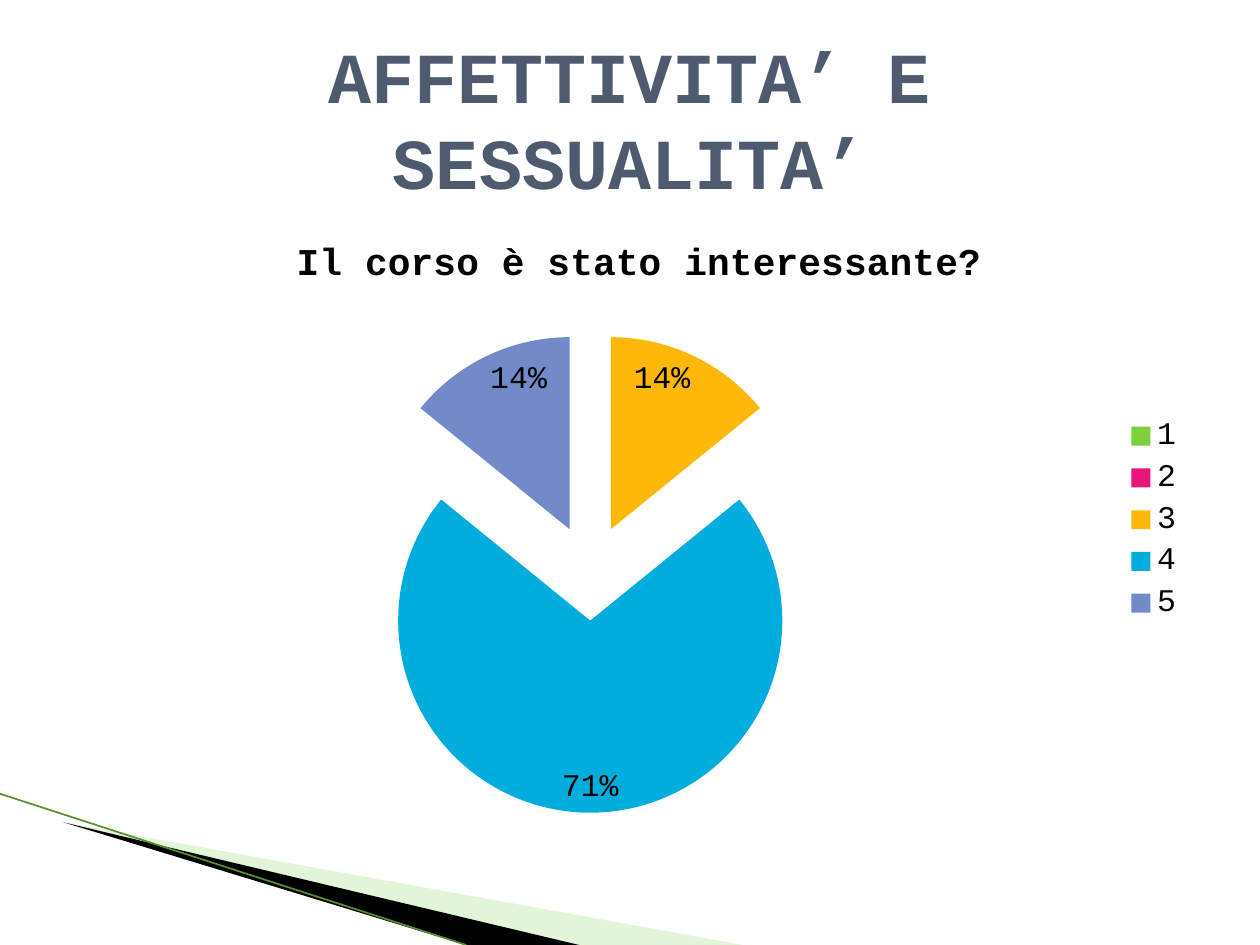
from lxml import etree
from pptx import Presentation, util as u
from pptx.chart import data
from pptx.dml import color
from pptx.enum import chart as ch, shapes, text
from pptx.oxml import ns

FONT = "Courier New"
BLACK = color.RGBColor(0x00, 0x00, 0x00)
SLATE = color.RGBColor(0x4E, 0x5B, 0x6F)
PALE_GREEN = color.RGBColor(0xB8, 0xE7, 0xA1)
EDGE_GREEN = color.RGBColor(0x55, 0x91, 0x2B)
SLICE_COLORS = [
    color.RGBColor(0x7F, 0xD1, 0x3B),
    color.RGBColor(0xEA, 0x15, 0x7A),
    color.RGBColor(0xFE, 0xB8, 0x0A),
    color.RGBColor(0x00, 0xAD, 0xDC),
    color.RGBColor(0x73, 0x8A, 0xC8),
]


class SlideBuilder:
    """Holds the style and current slide; lengths are shares of the slide's size."""

    def __init__(self, deck):
        self.width, self.height = deck.slide_width, deck.slide_height
        self.slide = deck.slides.add_slide(deck.slide_layouts[5])

    def place(self, x, y):
        return round(x * self.width), round(y * self.height)

    def style(self, font, size, rgb, bold=False):
        font.name, font.size, font.bold = FONT, u.Pt(size), bold
        font.color.rgb = rgb

    def add_heading(self, frame, words, size, rgb):
        para = frame.paragraphs[0]
        para.alignment = text.PP_ALIGN.CENTER
        span = para.add_run()
        span.text = words
        self.style(span.font, size, rgb, bold=True)

    def title(self, words, x, y, width, height):
        box = self.slide.shapes.title
        box.left, box.top = self.place(x, y)
        box.width, box.height = self.place(width, height)
        frame = box.text_frame
        frame.word_wrap = True
        frame.auto_size = text.MSO_AUTO_SIZE.NONE
        frame.vertical_anchor = text.MSO_ANCHOR.MIDDLE
        self.add_heading(frame, words, 41, SLATE)

    def wedge(self, corners, rgb, opacity=100):
        start, *others = [self.place(*corner) for corner in corners]
        outline = self.slide.shapes.build_freeform(*start)
        outline.add_line_segments(others, close=True)
        shape = outline.convert_to_shape()
        shape.shadow.inherit = False
        shape.fill.solid()
        shape.fill.fore_color.rgb = rgb
        shape.line.fill.background()
        if opacity < 100:
            tint = shape._element.spPr.find(".//" + ns.qn("a:srgbClr"))
            etree.SubElement(tint, ns.qn("a:alpha"), val=str(opacity * 1000))

    def line(self, start, end, rgb, weight):
        edge = self.slide.shapes.add_connector(
            shapes.MSO_CONNECTOR.STRAIGHT, *self.place(*start), *self.place(*end))
        edge.line.color.rgb = rgb
        edge.line.width = u.Pt(weight)
        etree.SubElement(edge._element.spPr, ns.qn("a:effectLst"))

    def chart_layout(self, parent, index, **settings):
        for old in parent.findall(ns.qn("c:layout")):
            parent.remove(old)
        layout = etree.Element(ns.qn("c:layout"))
        manual = etree.SubElement(layout, ns.qn("c:manualLayout"))
        for tag, value in settings.items():
            etree.SubElement(manual, ns.qn(f"c:{tag}"), val=str(value))
        parent.insert(index, layout)

    def pie(self, heading, values, x, y, width, height):
        source = data.CategoryChartData(number_format='0"%"')
        source.categories = [str(n + 1) for n in range(len(values))]
        source.add_series(heading, values)
        chart = self.slide.shapes.add_chart(
            ch.XL_CHART_TYPE.PIE, *self.place(x, y), *self.place(width, height), source).chart
        self.style(chart.font, 18, BLACK)

        chart.has_title = True
        self.add_heading(chart.chart_title.text_frame, heading, 21.6, BLACK)
        self.chart_layout(chart.chart_title._element, 1,
                          xMode="edge", yMode="edge", x=0.2, y=0.04)
        self.chart_layout(chart._chartSpace.chart.plotArea, 0, layoutTarget="inner",
                          xMode="edge", yMode="edge", x=0.25, y=0.2, w=0.43, h=0.77)

        chart.has_legend = True
        chart.legend.position = ch.XL_LEGEND_POSITION.RIGHT
        chart.legend.include_in_layout = False
        self.style(chart.legend.font, 18, BLACK)

        plot = chart.plots[0]
        plot.vary_by_categories = True
        series = plot.series[0]
        explosion = etree.Element(ns.qn("c:explosion"), val="25")
        series._element.find(ns.qn("c:tx")).addnext(explosion)
        for index, rgb in enumerate(SLICE_COLORS):
            fill = series.points[index].format.fill
            fill.solid()
            fill.fore_color.rgb = rgb

        plot.has_data_labels = True
        labels = plot.data_labels
        labels.show_value, labels.show_percentage = True, False
        labels.number_format, labels.number_format_is_linked = '0"%"', False
        labels.position = ch.XL_LABEL_POSITION.INSIDE_END
        self.style(labels.font, 18, BLACK)


def main():
    deck = Presentation()
    deck.slide_width, deck.slide_height = u.Inches(10), u.Inches(7.5)
    page = SlideBuilder(deck)
    page.wedge([(0.05, 0.87), (0.59, 1), (0.46, 1)], PALE_GREEN, opacity=40)
    page.wedge([(0.05, 0.87), (0.46, 1), (0.37, 1)], BLACK)
    page.line((0, 0.84), (0.37, 1), EDGE_GREEN, 0.95)
    page.pie("Il corso è stato interessante?", [None, None, 14, 71, 14],
             0.05, 0.22, 0.9, 0.66)
    page.title("AFFETTIVITA’ E SESSUALITA’", 0.05, 0.04, 0.9, 0.17)
    deck.save("out.pptx")


if __name__ == "__main__":
    main()
